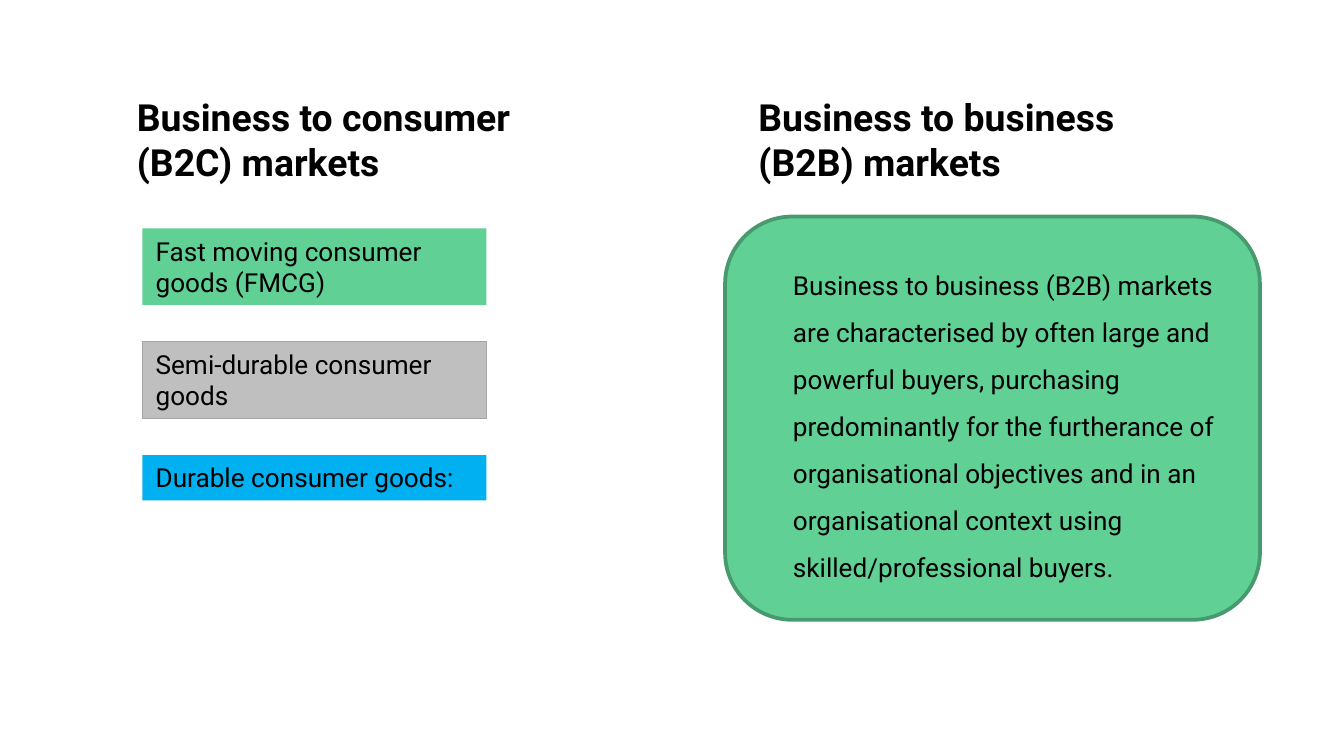
from pptx import Presentation
from pptx.dml.color import RGBColor
from pptx.enum.shapes import MSO_SHAPE
from pptx.enum.text import MSO_ANCHOR, MSO_AUTO_SIZE, PP_ALIGN
from pptx.util import Inches, Pt

RECTANGLE, ROUNDED = MSO_SHAPE.RECTANGLE, MSO_SHAPE.ROUNDED_RECTANGLE
TOP, MIDDLE = MSO_ANCHOR.TOP, MSO_ANCHOR.MIDDLE
GROW, FIXED = MSO_AUTO_SIZE.SHAPE_TO_FIT_TEXT, MSO_AUTO_SIZE.NONE
LEFT = PP_ALIGN.LEFT

WIDTH = Inches(10)
HEIGHT = WIDTH * 9 // 16
COLUMN, ROW = WIDTH / 100, HEIGHT / 100
FONT = "Roboto"
COLORS = {
    "text": "000000",
    "green": "61D095",
    "green_edge": "489A6E",
    "grey": "BFBFBF",
    "grey_edge": "A6A6A6",
    "blue": "00B0F0",
}
HEADING_WIDTH, HEADING_ROWS = 30.7, 13.75
GOODS_WIDTH, GOODS_GAP = 25.6, 4.85
GOODS = [
    ("Fast moving consumer goods (FMCG)", 10.15, "green", None),
    ("Semi-durable consumer goods", 10.15, "grey", "grey_edge"),
    ("Durable consumer goods:", 6, "blue", None),
]
BUSINESS_TEXT = (
    "Business to business (B2B) markets are characterised by often large and "
    "powerful buyers, purchasing predominantly for the furtherance of "
    "organisational objectives and in an organisational context using "
    "skilled/professional buyers."
)


def color(name):
    """Return the named colour."""
    return RGBColor.from_string(COLORS[name])


def grid(left, top, width, height):
    """Turn columns and rows into slide lengths."""
    return [round(n * unit) for n, unit in
            zip((left, top, width, height), (COLUMN, ROW, COLUMN, ROW))]


def write(shape, text, size, bold=False, anchor=TOP, auto_size=GROW):
    """Write one left-aligned paragraph and return it."""
    frame = shape.text_frame
    frame.word_wrap = True
    frame.auto_size = auto_size
    frame.vertical_anchor = anchor
    paragraph = frame.paragraphs[0]
    paragraph.alignment = LEFT
    run = paragraph.add_run()
    run.text = text
    run.font.name = FONT
    run.font.size = Pt(size)
    run.font.bold = bold
    run.font.color.rgb = color("text")
    return paragraph


def add_heading(slide, left, top, text):
    """Add the bold heading of a market."""
    box = slide.shapes.add_textbox(*grid(left, top, HEADING_WIDTH, HEADING_ROWS))
    write(box, text, 20, bold=True)


def add_block(slide, kind, box, fill, edge=None, edge_width=0.75):
    """Add a flat filled shape with an optional outline."""
    shape = slide.shapes.add_shape(kind, *grid(*box))
    shape.shadow.inherit = False
    shape.fill.solid()
    shape.fill.fore_color.rgb = color(fill)
    if edge:
        shape.line.color.rgb = color(edge)
        shape.line.width = Pt(edge_width)
    else:
        shape.line.fill.background()
    return shape


def add_consumer_market(slide, left, top):
    """Add the consumer heading above an evenly spaced stack of goods."""
    add_heading(slide, left, top, "Business to consumer (B2C) markets")
    goods_top = top + 18.6
    for text, rows, fill, edge in GOODS:
        box = (left + 1.4, goods_top, GOODS_WIDTH, rows)
        write(add_block(slide, RECTANGLE, box, fill, edge), text, 14)
        goods_top += rows + GOODS_GAP


def add_business_market(slide, left, top, width, height):
    """Add the business heading above a rounded card that fills the box."""
    add_heading(slide, left + 1.5, top, "Business to business (B2B) markets")
    card_offset = 17.05
    box = (left, top + card_offset, width, height - card_offset)
    card = add_block(slide, ROUNDED, box, "green", "green_edge", 2)
    paragraph = write(card, BUSINESS_TEXT, 14, anchor=MIDDLE, auto_size=FIXED)
    paragraph.line_spacing = 1.5
    properties = paragraph._p.get_or_add_pPr()
    properties.set("marL", str(Inches(0.26)))
    properties.set("indent", "0")


def main():
    """Build and save the slide."""
    presentation = Presentation()
    presentation.slide_width, presentation.slide_height = WIDTH, HEIGHT
    slide = presentation.slides.add_slide(presentation.slide_layouts[6])
    add_consumer_market(slide, 9.2, 11.6)
    add_business_market(slide, 53.95, 11.6, 39.8, 70.4)
    presentation.save("out.pptx")


if __name__ == "__main__":
    main()
